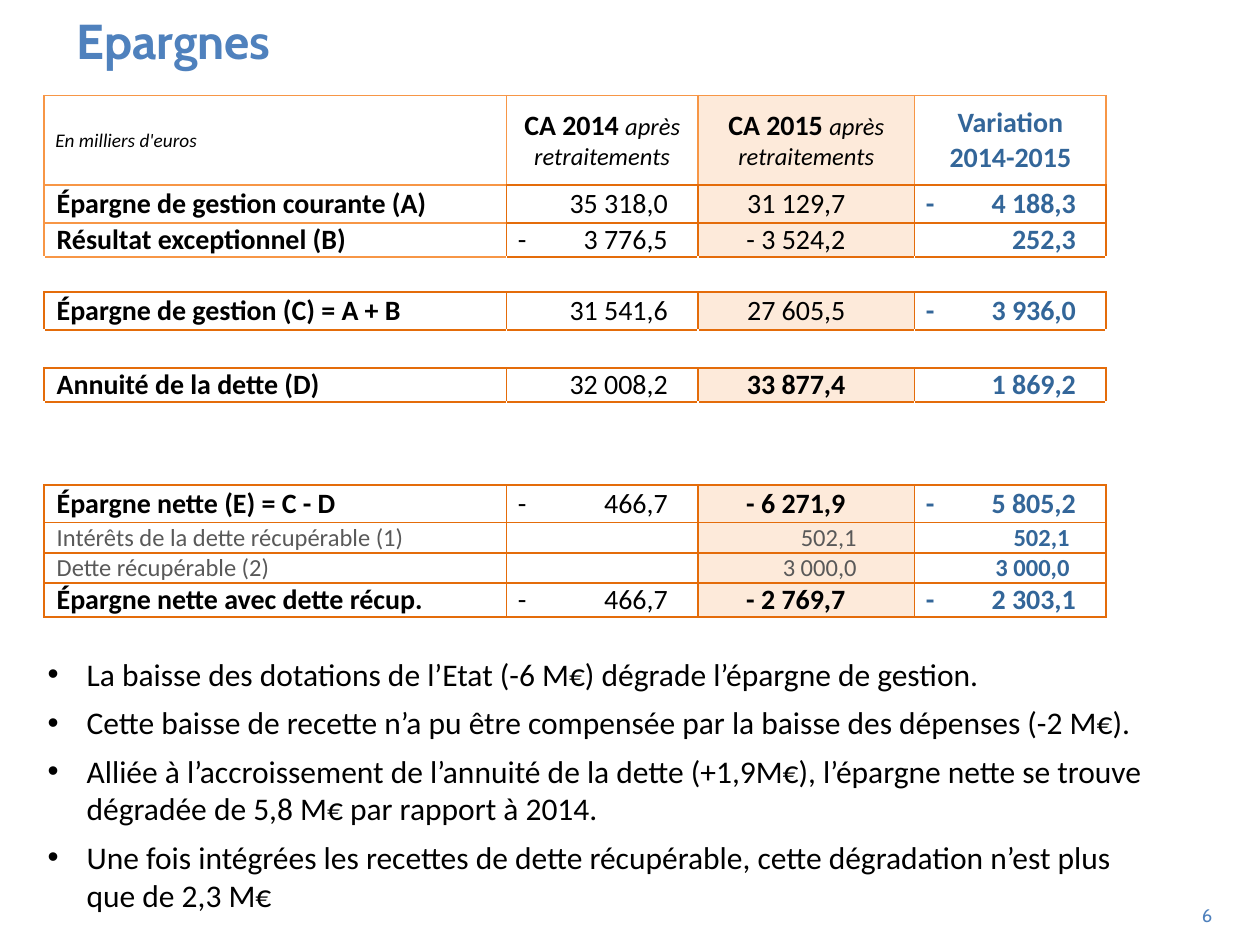
"""Build the savings slide: title, table of figures and comments."""
import pptx
import pptx.dml.color
import pptx.enum.text
import pptx.oxml
import pptx.oxml.ns
import pptx.util
from pptx.util import Inches

ALIGN = pptx.enum.text.PP_ALIGN
ANCHOR = pptx.enum.text.MSO_ANCHOR
BLACK, WHITE, GREY = "000000", "FFFFFF", "595959"
BLUE, NAVY = "4F81BD", "336699"
ORANGE, LIGHT, PEACH = "E46C0A", "F79646", "FDEADA"

WIDTHS = [3.67, 1.52, 1.72, 1.52]
HEIGHTS = [0.71, 0.3, 0.27, 0.28, 0.3, 0.3, 0.27, 0.66, 0.3, 0.24, 0.24, 0.27]
INSETS = [0, 0.24, 0.55, 0.24]
HEADS = [
    [[("En milliers d'euros", 11, BLACK, False, True)]],
    [[("CA 2014 ", 16, BLACK, True, False),
      ("après retraitements", 14, BLACK, False, True)]],
    [[("CA 2015 ", 16, BLACK, True, False),
      ("après retraitements", 14, BLACK, False, True)]],
    [[("Variation", 16, NAVY, True, False)],
     [("2014-2015", 16, NAVY, True, False)]],
]
ROWS = [
    ("Épargne de gestion courante (A)", "35 318,0", "31 129,7", "-\t4 188,3"),
    ("Résultat exceptionnel (B)", "-\t3 776,5", "- 3 524,2", "252,3"),
    None,
    ("Épargne de gestion (C) = A + B", "31 541,6", "27 605,5", "-\t3 936,0"),
    None,
    ("Annuité de la dette (D)", "32 008,2", "33 877,4", "1 869,2"),
    None,
    ("Épargne nette (E) = C - D", "-\t466,7", "- 6 271,9", "-\t5 805,2"),
    ("Intérêts de la dette récupérable (1)", "", "502,1", "502,1"),
    ("Dette récupérable (2)", "", "3 000,0", "3 000,0"),
    ("Épargne nette avec dette récup.", "-\t466,7", "- 2 769,7", "-\t2 303,1"),
]
MINOR, STRONG = (9, 10), (6, 8, 11)
NOTES = [
    "La baisse des dotations de l’Etat (-6 M€) dégrade l’épargne de gestion.",
    "Cette baisse de recette n’a pu être compensée par la baisse des dépenses (-2 M€).",
    "Alliée à l’accroissement de l’annuité de la dette (+1,9M€), l’épargne nette "
    "se trouve dégradée de 5,8 M€ par rapport à 2014.",
    "Une fois intégrées les recettes de dette récupérable, cette dégradation "
    "n’est plus que de 2,3 M€",
]


def paint(item, color):
    if hasattr(item, "solid"):
        item.solid()
        item = item.fore_color
    item.rgb = pptx.dml.color.RGBColor.from_string(color)


def add_run(para, text, size, color, bold=False, italic=False, face="Calibri"):
    run = para.add_run()
    run.text = text
    font = run.font
    font.name, font.size = face, pptx.util.Pt(size)
    font.bold, font.italic = bold, italic
    paint(font.color, color)


def add_node(parent, tag, **attrs):
    node = pptx.oxml.ns.qn(tag)
    child = parent.makeelement(node, {k: str(v) for k, v in attrs.items()})
    parent.append(child)
    return child


def hang(para, left, first):
    props = para._p.get_or_add_pPr()
    props.set("marL", str(Inches(left)))
    props.set("indent", str(Inches(first)))
    return props


def set_edges(cell, colors):
    props = cell._tc.get_or_add_tcPr()
    tags = ("a:lnL", "a:lnR", "a:lnT", "a:lnB")
    for spot, (tag, color) in enumerate(zip(tags, colors)):
        line = add_node(props, tag, w=pptx.util.Pt(1))
        fill = add_node(line, "a:solidFill")
        add_node(fill, "a:srgbClr", val=color)
        props.remove(line)
        props.insert(spot, line)


def edges(row, col):
    if row == 0:
        return [LIGHT] * 3 + [ORANGE if col else LIGHT]
    if ROWS[row - 1] is None:
        top = LIGHT if row == 3 and col == 0 else ORANGE
        return [WHITE, WHITE, top, ORANGE]
    if row < 3 and col == 0:
        return [LIGHT, ORANGE, LIGHT, LIGHT]
    return [ORANGE] * 4


def fill_head(cell, col):
    frame = cell.text_frame
    for spot, runs in enumerate(HEADS[col]):
        para = frame.add_paragraph() if spot else frame.paragraphs[0]
        para.alignment = ALIGN.CENTER if col else ALIGN.LEFT
        for run in runs:
            add_run(para, *run)
    if col == 0:
        cell.margin_left = Inches(0.09)


def fill_cell(cell, row, col, text):
    para = cell.text_frame.paragraphs[0]
    if not text:
        para._p.get_or_add_endParaRPr().set("sz", "1200")
        return
    minor = row in MINOR
    color = NAVY if col == 3 else GREY if minor else BLACK
    bold = [not minor, False, row in STRONG, True][col]
    inset = INSETS[col]
    if minor:
        inset += 0.05 if col == 3 else -0.09
    if col == 0:
        hang(para, 0.19, -0.09)
    elif "\t" in text:
        cell.margin_left = Inches(0.09)
        stops = add_node(para._p.get_or_add_pPr(), "a:tabLst")
        stop = Inches(WIDTHS[col] - inset - 0.09)
        add_node(stops, "a:tab", pos=stop, algn="r")
    else:
        para.alignment = ALIGN.RIGHT
        cell.margin_right = Inches(inset)
    add_run(para, text, 14 if minor else 16, color, bold)


def add_grid(slide):
    shape = slide.shapes.add_table(
        len(HEIGHTS), len(WIDTHS), Inches(0.35), Inches(0.76),
        Inches(sum(WIDTHS)), Inches(sum(HEIGHTS)))
    table = shape.table
    table.first_row = table.horz_banding = False
    for col, width in enumerate(WIDTHS):
        table.columns[col].width = Inches(width)
    for row, height in enumerate(HEIGHTS):
        table.rows[row].height = Inches(height)
        texts = ROWS[row - 1] if row else None
        for col in range(len(WIDTHS)):
            cell = table.cell(row, col)
            cell.margin_left = cell.margin_right = 0
            cell.margin_top = cell.margin_bottom = 0
            cell.vertical_anchor = ANCHOR.MIDDLE
            tinted = col == 2 and (row == 0 or texts)
            paint(cell.fill, PEACH if tinted else WHITE)
            set_edges(cell, edges(row, col))
            if row == 0:
                fill_head(cell, col)
            else:
                fill_cell(cell, row, col, texts[col] if texts else "")


def add_title(slide):
    title = slide.shapes.title
    title.left, title.top = Inches(0.51), Inches(0.03)
    title.width, title.height = Inches(9), Inches(1.25)
    frame = title.text_frame
    frame.vertical_anchor = ANCHOR.TOP
    para = frame.paragraphs[0]
    para.alignment = ALIGN.LEFT
    add_run(para, "Epargnes", 28, BLUE, True, face="Cabin")


def add_box(slide, left, top, width, height):
    box = slide.shapes.add_textbox(
        Inches(left), Inches(top), Inches(width), Inches(height))
    box.text_frame.word_wrap = True
    return box.text_frame


def add_notes(slide):
    frame = add_box(slide, 0.28, 5.15, 9.06, 2.17)
    for spot, text in enumerate(NOTES):
        para = frame.add_paragraph() if spot else frame.paragraphs[0]
        props = hang(para, 0.31, -0.31)
        add_node(props, "a:buFont", typeface="Arial")
        add_node(props, "a:buChar", char="•")
        if spot:
            para.space_before = pptx.util.Pt(6)
        add_run(para, text, 18, BLACK)


def add_page(slide):
    frame = add_box(slide, 9.16, 7.06, 0.56, 0.4)
    frame.vertical_anchor = ANCHOR.MIDDLE
    para = frame.paragraphs[0]
    para.alignment = ALIGN.RIGHT
    add_run(para, "6", 10.5, BLUE, face="Cabin")


def main():
    deck = pptx.Presentation()
    deck.slide_width, deck.slide_height = Inches(10), Inches(7.5)
    slide = deck.slides.add_slide(deck.slide_layouts[5])
    add_page(slide)
    add_title(slide)
    add_grid(slide)
    add_notes(slide)
    deck.save("out.pptx")


if __name__ == "__main__":
    main()
